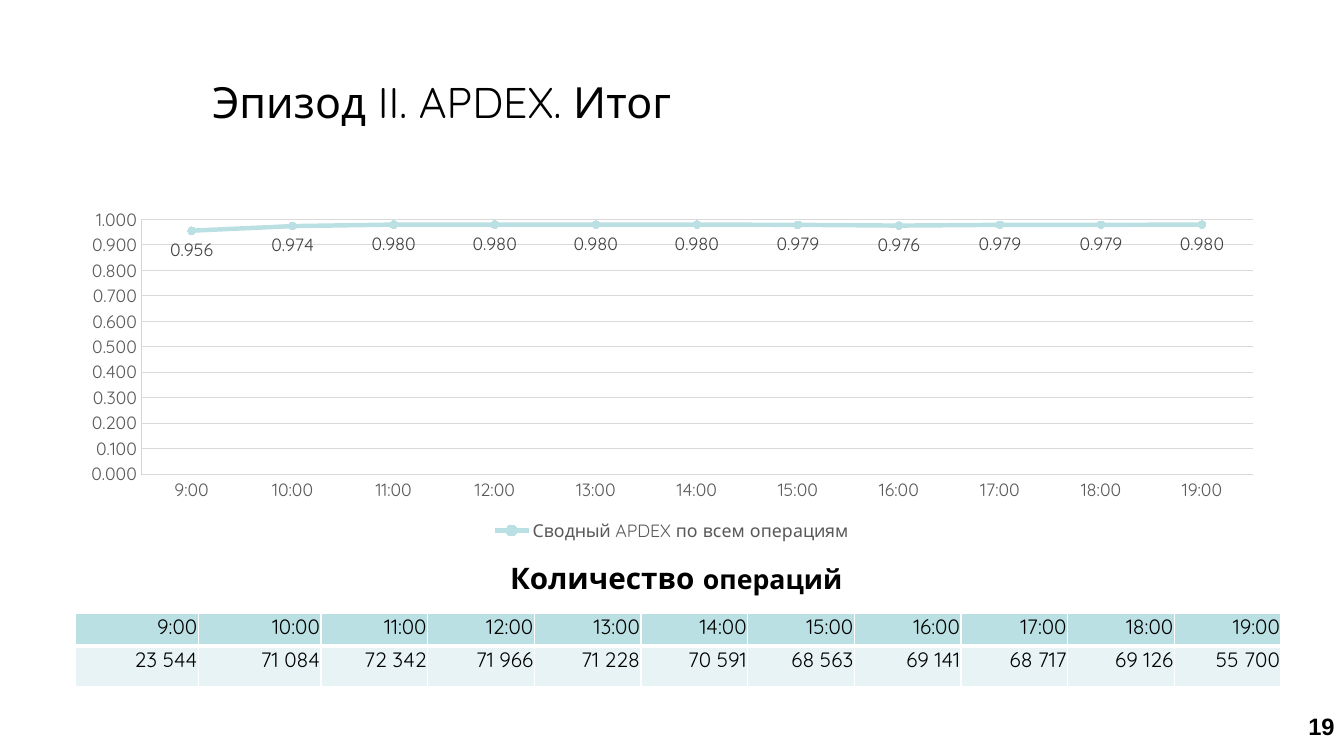
"""Build the APDEX summary slide with its line chart and operations table."""
from dataclasses import dataclass
from typing import Any

from pptx import Presentation
from pptx.chart.data import CategoryChartData
from pptx.dml.color import RGBColor
from pptx.enum.chart import XL_CHART_TYPE, XL_LABEL_POSITION, XL_LEGEND_POSITION
from pptx.enum.chart import XL_MARKER_STYLE, XL_TICK_MARK
from pptx.enum.text import MSO_ANCHOR, MSO_AUTO_SIZE, PP_ALIGN
from pptx.oxml import parse_xml
from pptx.oxml.ns import nsdecls
from pptx.slide import Slide
from pptx.util import Inches, Pt


@dataclass(frozen=True)
class Theme:
    font: str = "Quicksand"
    number_font: str = "Arial"
    black: str = "000000"
    white: str = "FFFFFF"
    accent: str = "BBE0E3"
    pale: str = "E7F3F4"
    grid: str = "D9D9D9"
    axis_text: str = "595959"
    label_text: str = "404040"
    title_size: float = 29
    heading_size: float = 20
    subheading_size: float = 18
    number_size: float = 16
    table_size: float = 14
    chart_size: float = 12


@dataclass(frozen=True)
class Area:
    left: float
    top: float
    width: float
    height: float

    def lengths(self) -> tuple[int, ...]:
        return tuple(Inches(side) for side in (self.left, self.top, self.width, self.height))


@dataclass(frozen=True)
class Span:
    text: str
    size: float
    font: str
    bold: bool = False


@dataclass(frozen=True)
class Caption:
    area: Area
    align: PP_ALIGN
    spans: tuple[Span, ...]
    line_spacing: float = 1.0


@dataclass(frozen=True)
class Hour:
    time: str
    apdex: float
    operations: str
    column_width: float = 1.0


THEME = Theme()
HOURS = (
    Hour("9:00", 0.956, "23 544", 1.15),
    Hour("10:00", 0.974, "71 084", 1.15),
    Hour("11:00", 0.98, "72 342"),
    Hour("12:00", 0.98, "71 966"),
    Hour("13:00", 0.98, "71 228"),
    Hour("14:00", 0.98, "70 591"),
    Hour("15:00", 0.979, "68 563"),
    Hour("16:00", 0.976, "69 141"),
    Hour("17:00", 0.979, "68 717"),
    Hour("18:00", 0.979, "69 126"),
    Hour("19:00", 0.98, "55 700"),
)
TITLE = Caption(
    Area(1.89, 0.39, 5.86, 1.12),
    PP_ALIGN.LEFT,
    (Span("Эпизод II. APDEX. Итог", THEME.title_size, THEME.font),),
)
CAPTIONS = (
    Caption(
        Area(0.71, 5.2, 11.26, 0.45),
        PP_ALIGN.CENTER,
        (
            Span("Количество ", THEME.heading_size, THEME.font, True),
            Span("операций", THEME.subheading_size, THEME.font, True),
        ),
    ),
    Caption(
        Area(11.6, 6.6, 1.01, 0.39),
        PP_ALIGN.RIGHT,
        (Span("19", THEME.number_size, THEME.number_font, True),),
        1.1,
    ),
)
CHART_AREA = Area(0.63, 1.89, 11.34, 3.23)
TABLE_AREA = Area(0.71, 5.75, 11.26, 0.69)
ROW_HEIGHTS = (0.31, 0.38)


def apply(target: Any, values: dict[str, Any]) -> None:
    for name, value in values.items():
        setattr(target, name, value)


def style_font(font: Any, size: float, color: str, name: str = THEME.font, bold: bool = False) -> None:
    apply(font, {"name": name, "size": Pt(size), "bold": bold})
    font.color.rgb = RGBColor.from_string(color)


def style_line(line: Any, color: str, width: float) -> None:
    line.color.rgb = RGBColor.from_string(color)
    line.width = Pt(width)


def fill_solid(fill: Any, color: str) -> None:
    fill.solid()
    fill.fore_color.rgb = RGBColor.from_string(color)


def write_caption(box: Any, caption: Caption, auto_size: MSO_AUTO_SIZE) -> None:
    apply(box, dict(zip(("left", "top", "width", "height"), caption.area.lengths())))
    frame = box.text_frame
    apply(frame, {"word_wrap": True, "auto_size": auto_size})
    para = frame.paragraphs[0]
    apply(para, {"alignment": caption.align, "line_spacing": caption.line_spacing})
    for span in caption.spans:
        run = para.add_run()
        run.text = span.text
        style_font(run.font, span.size, THEME.black, span.font, span.bold)


def add_apdex_chart(page: Slide) -> None:
    data = CategoryChartData(number_format="0.000")
    data.categories = [hour.time for hour in HOURS]
    data.add_series("Сводный APDEX по всем операциям", [hour.apdex for hour in HOURS])
    chart = page.shapes.add_chart(XL_CHART_TYPE.LINE_MARKERS, *CHART_AREA.lengths(), data).chart
    apply(chart, {"has_title": False, "has_legend": True})
    apply(chart.legend, {"position": XL_LEGEND_POSITION.BOTTOM, "include_in_layout": False})
    scale = chart.value_axis
    apply(scale, {"minimum_scale": 0, "maximum_scale": 1, "major_unit": 0.1, "has_major_gridlines": True})
    apply(scale.tick_labels, {"number_format": "0.000", "number_format_is_linked": False})
    style_line(scale.major_gridlines.format.line, THEME.grid, 0.75)
    for axis, color in ((chart.category_axis, THEME.grid), (scale, THEME.accent)):
        apply(axis, {"major_tick_mark": XL_TICK_MARK.NONE, "minor_tick_mark": XL_TICK_MARK.NONE})
        style_line(axis.format.line, color, 0.75)
    plot = chart.plots[0]
    apply(plot, {"vary_by_categories": False, "has_data_labels": True})
    labels = plot.data_labels
    apply(labels, {
        "show_value": True,
        "position": XL_LABEL_POSITION.BELOW,
        "number_format": "0.000",
        "number_format_is_linked": False,
    })
    for part, color in (
        (chart, THEME.axis_text),
        (chart.legend, THEME.axis_text),
        (chart.category_axis.tick_labels, THEME.axis_text),
        (scale.tick_labels, THEME.axis_text),
        (labels, THEME.label_text),
    ):
        style_font(part.font, THEME.chart_size, color)
    series = plot.series[0]
    series.smooth = False
    style_line(series.format.line, THEME.accent, 3)
    apply(series.marker, {"style": XL_MARKER_STYLE.CIRCLE, "size": 5})
    fill_solid(series.marker.format.fill, THEME.accent)
    style_line(series.marker.format.line, THEME.accent, 0.75)


def add_border(cell: Any, side: str, width: float) -> None:
    cell._tc.get_or_add_tcPr().append(parse_xml(
        f'<a:ln{side} {nsdecls("a")} w="{Pt(width)}"><a:solidFill>'
        f'<a:srgbClr val="{THEME.white}"/></a:solidFill></a:ln{side}>'
    ))


def add_operations_table(page: Slide) -> None:
    table = page.shapes.add_table(len(ROW_HEIGHTS), len(HOURS), *TABLE_AREA.lengths()).table
    for row, height in zip(table.rows, ROW_HEIGHTS):
        row.height = Inches(height)
    margins = {f"margin_{side}": Inches(0.01) for side in ("left", "top", "right")}
    for column, hour in enumerate(HOURS):
        table.columns[column].width = Inches(hour.column_width)
        rows = ((hour.time, THEME.accent, 1, 3), (hour.operations, THEME.pale, 3, 1))
        for row, (text, color, top, bottom) in enumerate(rows):
            cell = table.cell(row, column)
            apply(cell, {**margins, "margin_bottom": 0, "vertical_anchor": MSO_ANCHOR.TOP, "text": text})
            for side, width in {"L": 1, "R": 1, "T": top, "B": bottom}.items():
                add_border(cell, side, width)
            fill_solid(cell.fill, color)
            para = cell.text_frame.paragraphs[0]
            para.alignment = PP_ALIGN.RIGHT
            style_font(para.runs[0].font, THEME.table_size, THEME.black)


def main() -> None:
    deck = Presentation()
    apply(deck, {"slide_width": Inches(12.6), "slide_height": Inches(7.09)})
    page = deck.slides.add_slide(deck.slide_layouts[5])
    write_caption(page.shapes.title, TITLE, MSO_AUTO_SIZE.NONE)
    page.shapes.title.text_frame.vertical_anchor = MSO_ANCHOR.MIDDLE
    add_operations_table(page)
    add_apdex_chart(page)
    for caption in CAPTIONS:
        box = page.shapes.add_textbox(*caption.area.lengths())
        write_caption(box, caption, MSO_AUTO_SIZE.SHAPE_TO_FIT_TEXT)
    deck.save("out.pptx")


if __name__ == "__main__":
    main()
